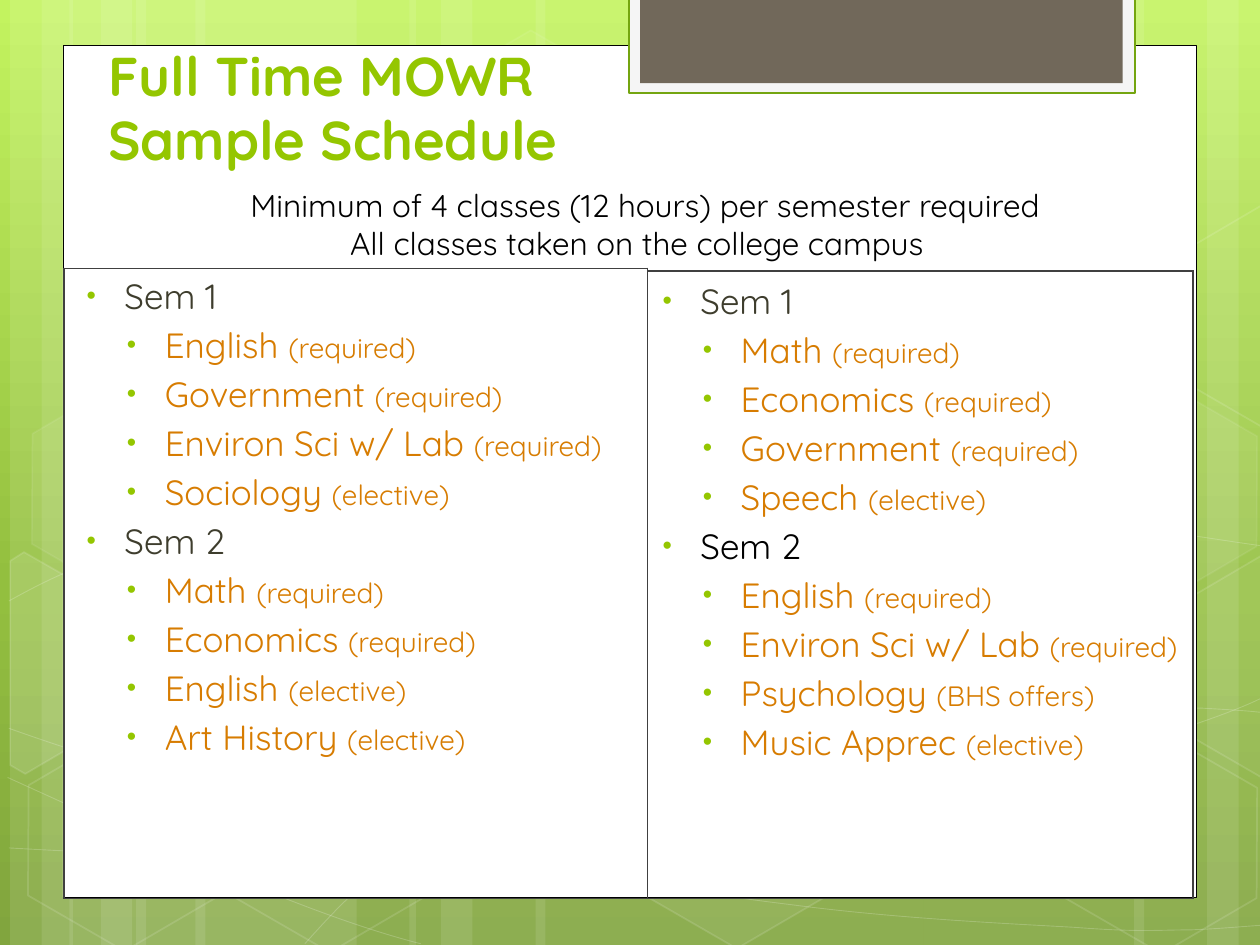
from dataclasses import dataclass
from math import cos, radians, sin

from lxml.etree import SubElement
from pptx import Presentation
from pptx.dml.color import RGBColor
from pptx.enum.shapes import MSO_SHAPE as Shape
from pptx.enum.text import MSO_ANCHOR as Anchor, MSO_AUTO_SIZE as AutoSize, PP_ALIGN as Align
from pptx.oxml import parse_xml
from pptx.oxml.ns import nsdecls, qn
from pptx.util import Inches, Pt


@dataclass(frozen=True)
class Theme:
    font: str = "Quicksand"
    white: str = "FFFFFF"
    black: str = "000000"
    green: str = "94C600"
    orange: str = "D77C01"
    olive: str = "3E3D2D"
    grid: str = "404040"
    tab: str = "F5F5F5"
    tab_edge: str = "74A510"
    tab_fill: str = "71685A"
    title: float = 31.2
    item: int = 20
    lead: int = 18
    note: int = 16


T = Theme()
W, H = 10, 7.5
TILT = 30  # degrees, for every hexagon
BACKGROUND = ((0, "C3F35F"), (62, "93BF3F"), (100, "81A53E"))

# Left edge, width and rotation of each full-height stripe
STRIPES = ((1.08, 1.75, 0), (0.08, 0.5, 0), (0.33, 0.83, 0), (1.55, 1.75, 0), (0.55, 0.5, 0),
           (0.8, 0.83, 0), (7.33, 1.75, 180), (9.58, 0.5, 180), (9, 0.83, 180),
           (4.25, 3.08, 0), (3.25, 0.5, 0), (3.5, 0.83, 0))

# Index of the knot reached by a straight line (or None), start point, groups of three Bezier points
CURVES = (
    (None, (0.07, 6.73), (0.61, 6.76), (1.15, 6.79), (1.9, 6.78), (2.65, 6.77), (3.58, 6.75),
     (4.58, 6.65), (5.58, 6.55), (7, 6.36), (7.92, 6.17), (8.83, 5.98), (9.77, 5.68), (10.07, 5.51)),
    (None, (0.07, 4.77), (0.36, 4.61), (0.65, 4.46), (1.21, 4.31), (1.78, 4.16), (2.59, 3.94),
     (3.47, 3.87), (4.36, 3.8), (5.44, 3.79), (6.54, 3.87), (7.64, 3.95), (9.47, 4.26), (10.07, 4.34)),
    (None, (0.06, 6.17), (1.27, 6.72), (2.47, 7.27), (3.34, 7.49)),
    (None, (0.07, 5.78), (0.38, 5.89), (0.7, 6), (1.28, 6.16), (1.86, 6.31), (2.73, 6.56),
     (3.57, 6.73), (4.4, 6.9), (5.45, 7.08), (6.28, 7.18), (7.11, 7.29), (8, 7.33), (8.53, 7.36),
     (9.05, 7.4), (9.19, 7.38), (9.45, 7.38), (9.71, 7.37), (9.89, 7.35), (10.07, 7.34)),
    (22, (2.42, 7.49), (2.6, 7.29), (2.78, 7.09), (3.02, 6.91), (3.26, 6.73), (3.6, 6.53),
     (3.88, 6.39), (4.16, 6.25), (4.33, 6.19), (4.7, 6.09), (5.06, 5.99), (5.73, 5.85), (6.08, 5.78),
     (6.44, 5.71), (6.49, 5.71), (6.8, 5.69), (7.11, 5.66), (7.6, 5.63), (7.94, 5.62),
     (8.29, 5.61), (8.86, 5.62), (8.86, 5.62), (9.53, 5.62),
     (9.71, 5.63), (9.88, 5.64), (9.97, 5.65), (10.06, 5.66), (10.03, 5.65), (10.06, 5.66)),
)

# Left, top, fill opacity and line opacity in percent
HEXAGONS = ((3.34, 0.36, 4, 8), (4.97, 5.89, 6, 12), (0.11, 5.91, None, 12), (0.14, 3.12, 7, 8),
            (1.74, 5.92, None, 12), (7.53, 4.53, 10, 12), (8.34, 5.93, None, 12), (8.34, 3.14, 7, 8))
# Hexagons cut off by the slide's edge: fill opacity, centre, corners as they appear when tilted
CUT_HEXAGONS = (
    (10, (0.36, 5.35),
     ((0.08, 4.45), (0.19, 4.38), (0.96, 4.82), (0.95, 5.7), (0.2, 6.14), (0.08, 6.07))),
    (4, (9.85, 5.2),
     ((9.26, 4.85), (10.01, 4.41), (10.09, 4.46), (10.09, 6.13), (10.02, 6.17), (9.26, 5.73))),
    (None, (9.85, 2.41),
     ((9.26, 2.07), (10.01, 1.63), (10.1, 1.68), (10.09, 3.35), (10.02, 3.39), (9.26, 2.95))),
)

REQ, ELECT = "(required)", "(elective)"
LEFT_PLAN = (
    ("Sem 1", T.olive, (("English ", REQ), ("Government ", REQ),
                        ("Environ Sci w/ Lab ", REQ), ("Sociology ", ELECT))),
    ("Sem 2", T.olive, (("Math ", REQ), ("Economics ", REQ),
                        ("English ", ELECT), ("Art History ", ELECT))),
)
RIGHT_PLAN = (
    ("Sem 1", T.olive, (("Math ", REQ), ("Economics ", REQ),
                        ("Government ", REQ), ("Speech ", ELECT))),
    ("Sem 2", T.black, (("English ", REQ), ("Environ Sci w/ Lab ", REQ),
                        ("Psychology ", "(BHS offers)"), ("Music Apprec ", ELECT))),
)


def inches(*values):
    return [Inches(v) for v in values]


def paint(fmt, color, opacity=None):
    """Give a fill a solid colour, or none; opacity is in percent."""
    if color is None:
        fmt.background()
        return
    fmt.solid()
    fmt.fore_color.rgb = RGBColor.from_string(color)
    if opacity is not None:
        clr = fmt._xPr.find(qn("a:solidFill"))[0]
        SubElement(clr, qn("a:alpha"), val=str(opacity * 1000))


def style(sp, fill=None, fill_op=None, line=None, width=1, line_op=None):
    sp.shadow.inherit = False
    paint(sp.fill, fill, fill_op)
    paint(sp.line.fill, line, line_op)
    if line:
        sp.line.width = Pt(width)


def add_rect(s, box, rotation=0, **look):
    sp = s.shapes.add_shape(Shape.RECTANGLE, *inches(*box))
    sp.rotation = rotation
    style(sp, **look)


def add_outline(s, points, close):
    pts = [tuple(inches(*p)) for p in points]
    builder = s.shapes.build_freeform(*pts[0])
    builder.add_line_segments(pts[1:], close=close)
    return builder.convert_to_shape()


def add_curve(s, straight, *knots):
    """Draw an open outline, then join its segments by threes into Bezier curves."""
    sp = add_outline(s, knots, False)
    segments = list(sp._element.iter(qn("a:lnTo")))
    if straight:
        del segments[straight - 1]
    for i in range(0, len(segments), 3):
        group = segments[i:i + 3]
        curve = group[0].makeelement(qn("a:cubicBezTo"))
        group[0].addprevious(curve)
        for seg in group:
            curve.append(seg[0])
            seg.getparent().remove(seg)
    style(sp, line=T.white, width=0.5, line_op=20)


def turn(point, centre, degrees):
    a, dx, dy = radians(degrees), point[0] - centre[0], point[1] - centre[1]
    return centre[0] + dx * cos(a) - dy * sin(a), centre[1] + dx * sin(a) + dy * cos(a)


def add_background(s):
    stops = "".join(f'<a:gs pos="{pos * 1000}"><a:srgbClr val="{c}"/></a:gs>' for pos, c in BACKGROUND)
    s._element.cSld.insert(0, parse_xml(
        f'<p:bg {nsdecls("p", "a")}><p:bgPr><a:gradFill rotWithShape="1"><a:gsLst>{stops}</a:gsLst>'
        '<a:lin ang="5400000" scaled="0"/></a:gradFill><a:effectLst/></p:bgPr></p:bg>'))


def add_backdrop(s):
    for left, width, rotation in STRIPES:
        add_rect(s, (left, 0, width, H), rotation, fill=T.white, fill_op=10)
    for curve in CURVES:
        add_curve(s, *curve)
    hexagons = []
    for left, top, fill_op, line_op in HEXAGONS:
        sp = s.shapes.add_shape(Shape.HEXAGON, *inches(left, top, 1.75, 1.52))
        sp.adjustments[0] = 0.285
        hexagons.append((sp, fill_op, line_op))
    for fill_op, centre, corners in CUT_HEXAGONS:
        level = [turn(c, centre, -TILT) for c in corners]
        hexagons.append((add_outline(s, level, True), fill_op, 12))
    for sp, fill_op, line_op in hexagons:
        sp.rotation = TILT
        style(sp, T.white if fill_op else None, fill_op, T.white, 1, line_op)


def add_run(p, text, size, color, bold=False):
    r = p.add_run()
    r.text = text
    r.font.name, r.font.size, r.font.bold = T.font, Pt(size), bold
    r.font.color.rgb = RGBColor.from_string(color)


def add_text_box(s, box):
    tf = s.shapes.add_textbox(*inches(*box)).text_frame
    tf.word_wrap = True
    return tf


def next_paragraph(tf):
    first = tf.paragraphs[0]
    return tf.add_paragraph() if first.runs else first


def add_bullet(tf, level):
    p = next_paragraph(tf)
    p.level = level
    pPr = p._p.get_or_add_pPr()
    pPr.set("marL", str(Inches((0.38, 0.7)[level])))
    pPr.set("indent", str(Inches(-0.3)))
    SubElement(SubElement(pPr, qn("a:spcBef")), qn("a:spcPct"), val="20000")
    SubElement(SubElement(pPr, qn("a:buClr")), qn("a:srgbClr"), val=T.green)
    SubElement(pPr, qn("a:buSzPct"), val="76000")
    SubElement(pPr, qn("a:buFont"), typeface="Arial")
    SubElement(pPr, qn("a:buChar"), char="•")
    return p


def add_plan(s, box, plan):
    tf = add_text_box(s, box)
    for term, color, classes in plan:
        add_run(add_bullet(tf, 0), term, T.item, color)
        for name, note in classes:
            p = add_bullet(tf, 1)
            add_run(p, name, T.item, T.orange)
            add_run(p, note, T.note, T.orange)


def add_frame_table(s, box):
    """Add a one-cell table that frames a column."""
    table = s.shapes.add_table(1, 1, *inches(*box)).table
    table.first_row = table.horz_banding = False
    cell = table.cell(0, 0)
    tcPr = cell._tc.get_or_add_tcPr()
    for side in "LRTB":
        ln = SubElement(tcPr, qn(f"a:ln{side}"), w=str(Pt(1)))
        SubElement(SubElement(ln, qn("a:solidFill")), qn("a:srgbClr"), val=T.grid)
    cell.fill.background()


def add_lead(s):
    tf = add_text_box(s, (0.65, 1.43, 8.81, 0.71))
    for text, shift in (("Minimum of 4 classes (12 hours) per semester required", 0.13),
                        ("All classes taken on the college campus", 0)):
        p = next_paragraph(tf)
        p.alignment = Align.CENTER
        p._p.get_or_add_pPr().set("marL", str(Inches(shift)))
        add_run(p, text, T.lead, T.black)


def set_title(s, text):
    sp = s.shapes.title
    sp.left, sp.top, sp.width, sp.height = inches(0.76, 0.33, 7.72, 1.1)
    tf = sp.text_frame
    tf.auto_size, tf.vertical_anchor, tf.word_wrap = AutoSize.NONE, Anchor.BOTTOM, True
    p = tf.paragraphs[0]
    p.alignment, p.line_spacing = Align.LEFT, 0.98
    for i, line in enumerate(text.split("\n")):
        if i:
            p.add_line_break()
        add_run(p, line, T.title, T.green, bold=True)
    s.shapes._spTree.append(sp._element)  # bring in front of the card


def main():
    prs = Presentation()
    prs.slide_width, prs.slide_height = inches(W, H)
    s = prs.slides.add_slide(prs.slide_layouts[5])
    add_background(s)
    add_backdrop(s)
    add_rect(s, (0.5, 0.36, 9, 6.76), fill=T.white, line=T.black, width=0.5)
    add_rect(s, (4.99, -0.02, 4.02, 0.76), fill=T.tab, line=T.tab_edge, width=1.25)
    add_rect(s, (5.08, -0.02, 3.83, 0.68), fill=T.tab_fill)
    add_plan(s, (5.08, 2.17, 4.61, 5.56), RIGHT_PLAN)
    add_plan(s, (0.51, 2.13, 4.57, 5.56), LEFT_PLAN)
    add_frame_table(s, (0.51, 2.13, 4.63, 5))
    add_frame_table(s, (5.14, 2.15, 4.33, 4.98))
    add_lead(s)
    set_title(s, "Full Time MOWR\nSample Schedule")
    prs.save("out.pptx")


if __name__ == "__main__":
    main()
